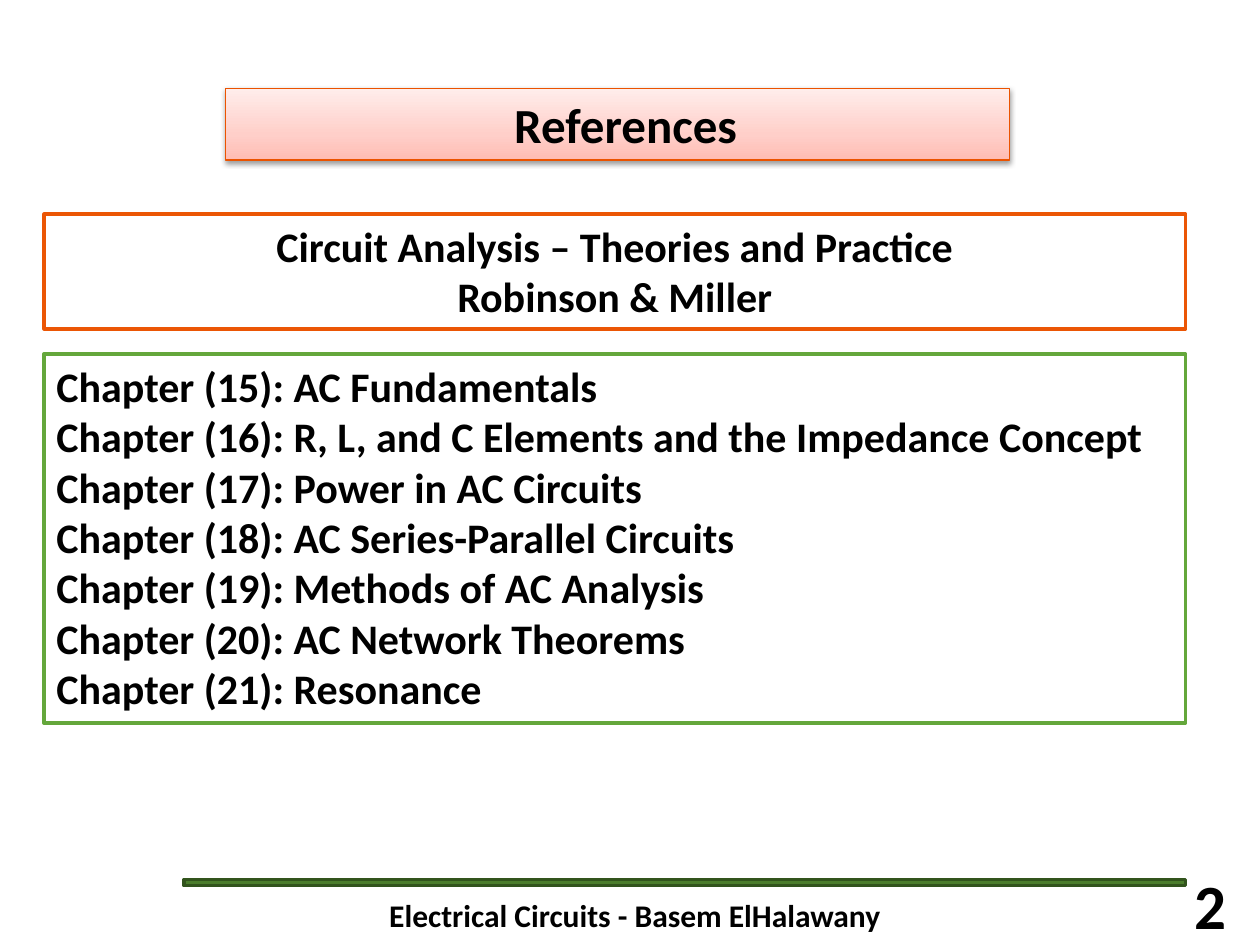
import copy
from dataclasses import dataclass

import lxml.etree
import pptx
import pptx.dml.color
import pptx.enum.shapes
import pptx.enum.text
import pptx.oxml.ns
import pptx.util

Inches = pptx.util.Inches
Pt = pptx.util.Pt
Align = pptx.enum.text.PP_ALIGN
Anchor = pptx.enum.text.MSO_ANCHOR


@dataclass(frozen=True)
class Theme:
    font: str = "Calibri"
    text: str = "000000"
    panel: str = "FFFFFF"
    orange: str = "EB5605"
    title_line: str = "EB5300"
    title_stops: tuple = ((0, "FFBCB3"), (0.35, "FFCFC9"), (1, "FFEDEB"))
    green: str = "64A73B"
    bar: str = "4B7D2C"
    bar_line: str = "32541D"
    footer_size: int = 18
    body_size: int = 24
    title_size: int = 28
    number_size: int = 36


def color(value):
    return pptx.dml.color.RGBColor.from_string(value)


class SlideBuilder:
    def __init__(self, slide, theme):
        self.slide = slide
        self.theme = theme

    def set_text(self, shape, lines, size, align, anchor):
        frame = shape.text_frame
        frame.text = "\n".join(lines)
        frame.word_wrap = True
        frame.auto_size = pptx.enum.text.MSO_AUTO_SIZE.NONE
        frame.vertical_anchor = anchor
        for para in frame.paragraphs:
            para.alignment = align
            for span in para.runs:
                span.font.name = self.theme.font
                span.font.size = Pt(size)
                span.font.bold = True
                span.font.color.rgb = color(self.theme.text)

    def outline(self, shape, line_color, width):
        shape.line.color.rgb = color(line_color)
        shape.line.width = Pt(width)

    def title(self, text, left, top, width, height):
        title = self.slide.shapes.title
        title.left, title.top = Inches(left), Inches(top)
        title.width, title.height = Inches(width), Inches(height)
        self.set_text(title, [text], self.theme.title_size, Align.CENTER, Anchor.TOP)
        title.text_frame.paragraphs[0]._p.get_or_add_pPr().set("marL", str(Inches(0.13)))
        self.title_gradient(title)
        self.outline(title, self.theme.title_line, 0.75)
        self.soft_shadow(title)

    def title_gradient(self, shape):
        """Fill from bottom to top with the three title colours."""
        shape.fill.gradient()
        shape.fill.gradient_angle = 90
        first = shape._element.spPr.find(".//" + pptx.oxml.ns.qn("a:gs"))
        first.addnext(copy.deepcopy(first))
        for stop, (position, value) in zip(shape.fill.gradient_stops, self.theme.title_stops):
            stop.position = position
            stop.color.rgb = color(value)

    def soft_shadow(self, shape):
        shape.shadow.inherit = False
        qn = pptx.oxml.ns.qn
        effects = shape._element.spPr.find(qn("a:effectLst"))
        shadow = lxml.etree.SubElement(
            effects, qn("a:outerShdw"), blurRad=str(Pt(3.1)), dist=str(Pt(1.6)),
            dir="5400000", rotWithShape="0")
        shade = lxml.etree.SubElement(shadow, qn("a:srgbClr"), val="000000")
        lxml.etree.SubElement(shade, qn("a:alpha"), val="38000")

    def rectangle(self, left, top, width, height, fill, line):
        box = self.slide.shapes.add_shape(
            pptx.enum.shapes.MSO_SHAPE.RECTANGLE,
            Inches(left), Inches(top), Inches(width), Inches(height))
        box.shadow.inherit = False
        box.fill.solid()
        box.fill.fore_color.rgb = color(fill)
        self.outline(box, line, 2)
        return box

    def panel(self, lines, top, height, line, align):
        box = self.rectangle(0.35, top, 9.06, height, self.theme.panel, line)
        self.set_text(box, lines, self.theme.body_size, align, Anchor.TOP)

    def label(self, text, left, top, width, size, align):
        box = self.slide.shapes.add_textbox(
            Inches(left), Inches(top), Inches(width), Inches(0.4))
        self.set_text(box, [text], size, align, Anchor.MIDDLE)


def main():
    deck = pptx.Presentation()
    deck.slide_width, deck.slide_height = Inches(10), Inches(7.5)
    theme = Theme()
    page = SlideBuilder(deck.slides.add_slide(deck.slide_layouts[5]), theme)

    page.label("Electrical Circuits - Basem ElHalawany", 1.77, 7.06, 6.54,
               theme.footer_size, Align.CENTER)
    page.label("2", 9.02, 6.98, 0.81, theme.number_size, Align.RIGHT)
    page.rectangle(1.46, 6.98, 7.95, 0.05, theme.bar, theme.bar_line)

    page.title("References", 1.79, 0.7, 6.22, 0.57)
    page.panel(["Circuit Analysis – Theories and Practice", "Robinson & Miller"],
               1.7, 0.91, theme.orange, Align.CENTER)
    chapters = [
        "AC Fundamentals",
        "R, L, and C Elements and the Impedance Concept",
        "Power in AC Circuits",
        "AC Series-Parallel Circuits",
        "Methods of AC Analysis",
        "AC Network Theorems",
        "Resonance",
    ]
    page.panel([f"Chapter ({number}): {name}" for number, name in enumerate(chapters, 15)],
               2.81, 2.93, theme.green, Align.LEFT)
    deck.save("out.pptx")


if __name__ == "__main__":
    main()
